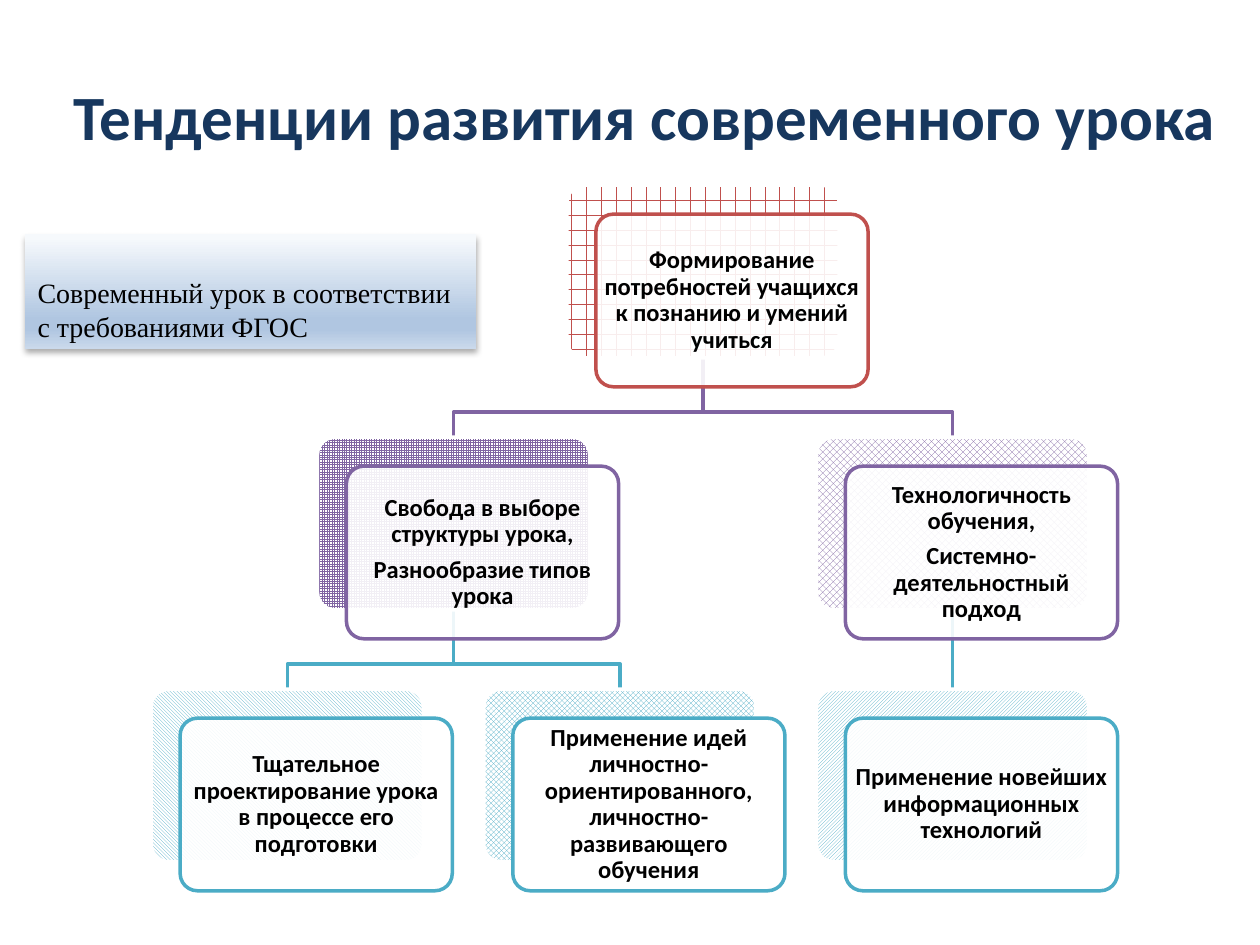
"""Build a slide with a tree of trends in the modern lesson."""
from typing import NamedTuple, Optional

from lxml import etree
from pptx import Presentation, util as u
from pptx.dml.color import RGBColor
from pptx.enum import dml, shapes, text
from pptx.oxml import ns

RED, PLUM, TEAL = "C0504D", "8064A2", "4BACC6"
WIDE, HIGH = 2.16, 1.37
LEFT, TOP, COL, ROW = 1.2, 1.47, 2.64, 2.0
SHIFT = 0.23
PAT = dml.MSO_PATTERN


class Node(NamedTuple):
    col: float
    row: int
    hue: str
    pattern: dml.MSO_PATTERN
    lines: list[str]
    base: Optional[int] = None
    alpha: int = 90

    @property
    def left(self) -> float:
        return LEFT + COL * self.col

    @property
    def top(self) -> float:
        return TOP + ROW * self.row

    @property
    def mid(self) -> float:
        return self.left + WIDE / 2


NODES = [
    Node(1.25, 0, RED, PAT.HORIZONTAL_BRICK,
         ["Формирование потребностей учащихся к познанию и умений учиться"]),
    Node(0.5, 1, PLUM, PAT.SMALL_GRID,
         ["Свобода в выборе структуры урока,", "Разнообразие типов урока"], 0),
    Node(0, 2, TEAL, PAT.DARK_DOWNWARD_DIAGONAL,
         ["Тщательное проектирование урока в процессе его подготовки"], 1),
    Node(1, 2, TEAL, PAT.TRELLIS,
         ["Применение идей личностно-ориентированного, "
          "личностно-развивающего обучения"], 1, 100),
    Node(2, 1, PLUM, PAT.LARGE_CHECKER_BOARD,
         ["Технологичность обучения,", "Системно-деятельностный подход"], 0),
    Node(2, 2, TEAL, PAT.DARK_UPWARD_DIAGONAL,
         ["Применение новейших информационных технологий"], 4),
]


def tint(code: str) -> RGBColor:
    return RGBColor.from_string(code)


def add(parent, tag: str, **attrs):
    return etree.SubElement(parent, ns.qn(tag), attrs)


def edge(shape, hue: str) -> None:
    shape.line.color.rgb = tint(hue)
    shape.line.width = u.Pt(2)


def write(shape, lines: list[str], size: int, font: str, hue: str,
          bold: bool, align: text.PP_ALIGN, gap: float = 0) -> None:
    frame = shape.text_frame
    frame.text = "\n".join(lines)
    frame.word_wrap = True
    frame.vertical_anchor = text.MSO_ANCHOR.MIDDLE
    for para in frame.paragraphs:
        para.alignment = align
        if gap:
            para.line_spacing = 0.9
            para.space_after = u.Pt(gap)
        for run in para.runs:
            run.font.size = u.Pt(size)
            run.font.name = font
            run.font.bold = bold
            run.font.color.rgb = tint(hue)


def link(slide, base: Node, node: Node) -> None:
    start, end = base.top + HIGH, node.top
    if base.col == node.col:
        line = slide.shapes.add_connector(
            shapes.MSO_CONNECTOR.STRAIGHT, u.Inches(base.mid),
            u.Inches(start), u.Inches(node.mid), u.Inches(end))
        add(line._element.spPr, "a:effectLst")
    else:
        bend = start + 0.43
        points = [(base.mid, bend), (node.mid, bend), (node.mid, end)]
        path = slide.shapes.build_freeform(u.Inches(base.mid), u.Inches(start))
        path.add_line_segments(
            [(u.Inches(x), u.Inches(y)) for x, y in points], close=False)
        line = path.convert_to_shape()
        line.fill.background()
        line.shadow.inherit = False
    edge(line, node.hue)


def card(slide, left: float, top: float, hue: str):
    shape = slide.shapes.add_shape(
        shapes.MSO_SHAPE.ROUNDED_RECTANGLE, u.Inches(left), u.Inches(top),
        u.Inches(WIDE), u.Inches(HIGH))
    shape.adjustments[0] = 0.1
    shape.shadow.inherit = False
    edge(shape, hue)
    return shape


def draw(slide, node: Node) -> None:
    back = card(slide, node.left, node.top, "FFFFFF")
    back.fill.patterned()
    back.fill.pattern = node.pattern
    back.fill.fore_color.rgb = tint(node.hue)
    back.fill.back_color.rgb = tint("FFFFFF")

    front = card(slide, node.left + SHIFT, node.top + SHIFT, node.hue)
    front.fill.solid()
    front.fill.fore_color.rgb = tint("FFFFFF")
    if node.alpha < 100:
        shade = front._element.spPr.find(".//" + ns.qn("a:srgbClr"))
        add(shade, "a:alpha", val=str(node.alpha * 1000))
    write(front, node.lines, 14, "Calibri", "000000", True,
          text.PP_ALIGN.CENTER, 5)
    frame = front.text_frame
    frame.margin_left = frame.margin_right = u.Inches(0.02)
    frame.margin_top = frame.margin_bottom = u.Inches(0.02)


def panel(slide) -> None:
    box = slide.shapes.add_shape(
        shapes.MSO_SHAPE.RECTANGLE, u.Inches(0.2), u.Inches(1.86),
        u.Inches(3.58), u.Inches(0.91))
    box.line.fill.background()
    box.shadow.inherit = False
    box.fill.background()
    props = box._element.spPr
    grad = etree.Element(ns.qn("a:gradFill"), rotWithShape="1")
    stops = add(grad, "a:gsLst")
    for pos, hue in [(3, "F6F9FC"), (74, "B0C6E1"), (83, "B0C6E1"),
                     (100, "CAD9EB")]:
        add(add(stops, "a:gs", pos=str(pos * 1000)), "a:srgbClr", val=hue)
    add(grad, "a:lin", ang="5400000", scaled="0")
    props.replace(props.find(ns.qn("a:noFill")), grad)
    glow = add(props.find(ns.qn("a:effectLst")), "a:outerShdw",
               blurRad=str(u.Pt(3.5)), dist=str(u.Pt(2.2)), dir="5400000",
               rotWithShape="0")
    add(add(glow, "a:srgbClr", val="000000"), "a:alpha", val="32000")
    write(box, ["Современный урок в соответствии", "с требованиями ФГОС"],
          16, "Times New Roman", "000000", False, text.PP_ALIGN.LEFT)
    box.text_frame.vertical_anchor = text.MSO_ANCHOR.BOTTOM


def main() -> None:
    deck = Presentation()
    deck.slide_width, deck.slide_height = u.Inches(10), u.Inches(7.5)
    slide = deck.slides.add_slide(deck.slide_layouts[6])
    title = slide.shapes.add_textbox(
        u.Inches(0.43), u.Inches(0.29), u.Inches(9.37), u.Inches(1.25))
    write(title, ["Тенденции развития современного урока"], 36, "Calibri",
          "17375E", True, text.PP_ALIGN.CENTER)
    for node in NODES:
        if node.base is not None:
            link(slide, NODES[node.base], node)
    for node in NODES:
        draw(slide, node)
    panel(slide)
    deck.save("out.pptx")


if __name__ == "__main__":
    main()
